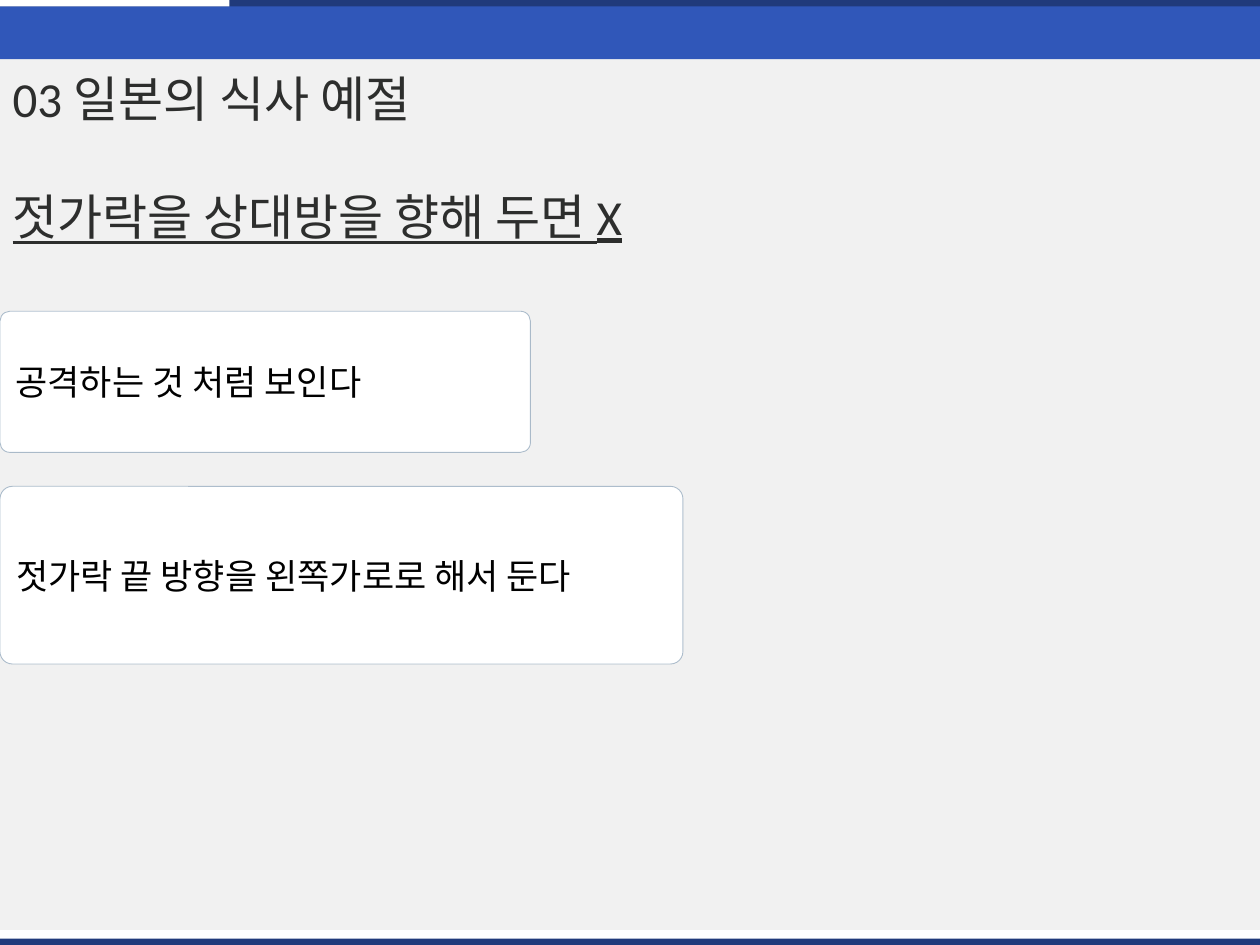
import pptx
import pptx.dml.color
import pptx.enum.shapes
import pptx.enum.text
import pptx.oxml.ns
import pptx.util
from lxml import etree

Inches = pptx.util.Inches
Pt = pptx.util.Pt
SHAPES = pptx.enum.shapes.MSO_SHAPE
ANCHOR = pptx.enum.text.MSO_ANCHOR

COLORS = {
    "panel": "F1F1F1",
    "band": "3057B9",
    "navy": "203A7B",
    "white": "FFFFFF",
    "heading": "2D2E2D",
    "body": "000000",
    "outline": "1F4E79",
}
FONT = "Calibri"
WIDTH, HEIGHT = 10, 7.5
STRIP = 0.05


def rgb(name):
    return pptx.dml.color.RGBColor.from_string(COLORS[name])


def write(paragraph, text, size=20, color="body", underline=None, before=0):
    paragraph.alignment = pptx.enum.text.PP_ALIGN.LEFT
    paragraph.space_before = Pt(before)
    run = paragraph.add_run()
    run.text = text
    run.font.name = FONT
    run.font.size = Pt(size)
    run.font.color.rgb = rgb(color)
    run.font.underline = underline


def add_block(slide, left, top, width, height, fill, kind=SHAPES.RECTANGLE):
    block = slide.shapes.add_shape(
        kind, Inches(left), Inches(top), Inches(width), Inches(height))
    block.shadow.inherit = False
    block.fill.solid()
    block.fill.fore_color.rgb = rgb(fill)
    block.line.fill.background()
    return block


def add_card(slide, top, width, height, text):
    card = add_block(slide, 0, top, width, height, "white", SHAPES.ROUNDED_RECTANGLE)
    card.adjustments[0] = 0.07
    card.line.width = Pt(0.5)
    card.line.color.rgb = rgb("outline")
    # Outline at 35 % opacity
    outline = card.line.fill._xPr.find(".//" + pptx.oxml.ns.qn("a:srgbClr"))
    etree.SubElement(outline, pptx.oxml.ns.qn("a:alpha"), val="35000")
    card.text_frame.word_wrap = True
    card.text_frame.vertical_anchor = ANCHOR.MIDDLE
    write(card.text_frame.paragraphs[0], text)


def add_heading(slide, topic, rule):
    heading = slide.shapes.title
    heading.left, heading.top = Inches(0), Inches(0.49)
    heading.width, heading.height = Inches(6.97), Inches(1.49)
    # Bring the heading in front of the panel
    heading.element.getparent().append(heading.element)
    frame = heading.text_frame
    frame.word_wrap = True
    frame.auto_size = pptx.enum.text.MSO_AUTO_SIZE.SHAPE_TO_FIT_TEXT
    frame.vertical_anchor = ANCHOR.TOP
    write(frame.paragraphs[0], topic, size=28, color="heading")
    write(frame.add_paragraph(), rule, size=28, color="heading",
          underline=True, before=34)


def main():
    deck = pptx.Presentation()
    deck.slide_width, deck.slide_height = Inches(WIDTH), Inches(HEIGHT)
    slide = deck.slides.add_slide(deck.slide_layouts[5])

    # Panel and top bands
    add_block(slide, 0, 0, WIDTH, 7.38, "panel")
    add_block(slide, 0, 0.03, WIDTH, 0.44, "band")
    add_block(slide, 0, 0, WIDTH, STRIP, "navy")
    add_block(slide, 0, 0, 1.82, STRIP, "white")

    # Heading and bottom strip
    add_heading(slide, "03 일본의 식사 예절", "젓가락을 상대방을 향해 두면 X")
    add_block(slide, 0, HEIGHT - STRIP, WIDTH, STRIP, "navy")

    # Reason and proper manner
    add_card(slide, 2.47, 4.21, 1.12, "공격하는 것 처럼 보인다")
    add_card(slide, 3.86, 5.42, 1.41, "젓가락 끝 방향을 왼쪽가로로 해서 둔다")

    deck.save("out.pptx")


if __name__ == "__main__":
    main()
